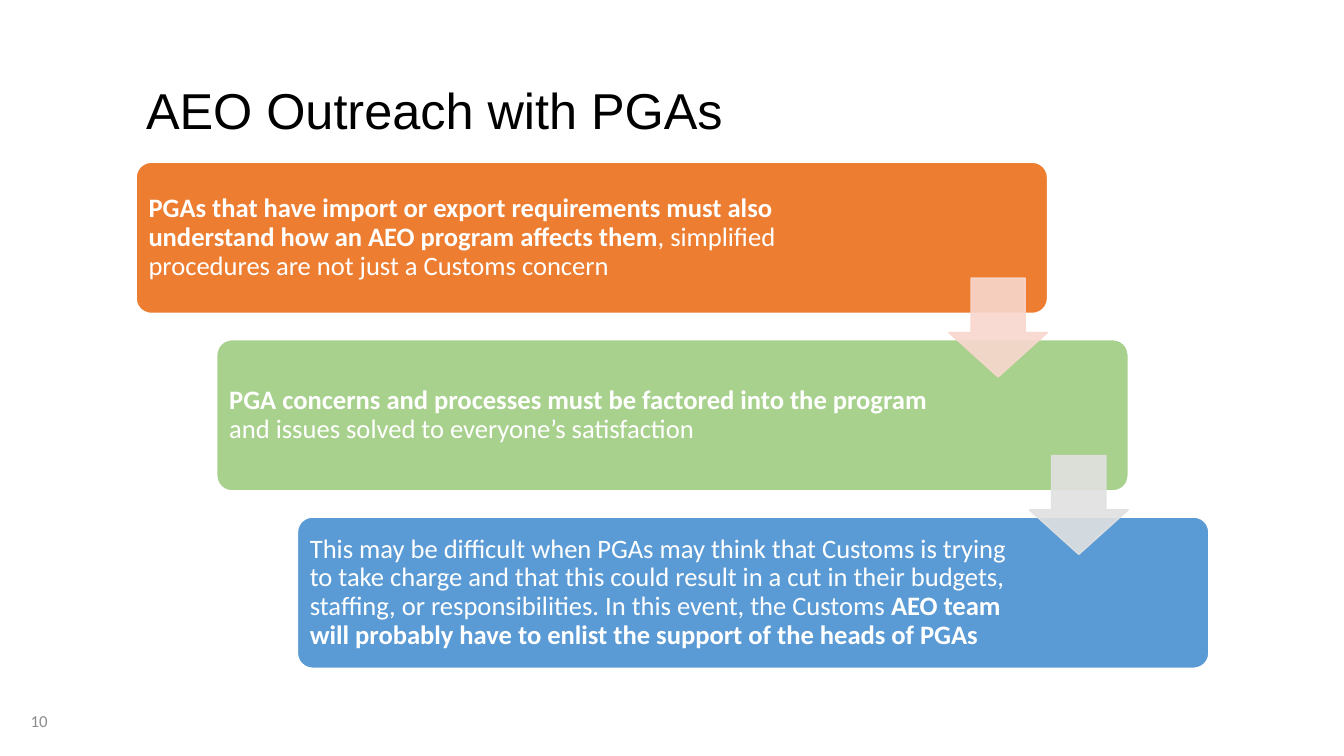
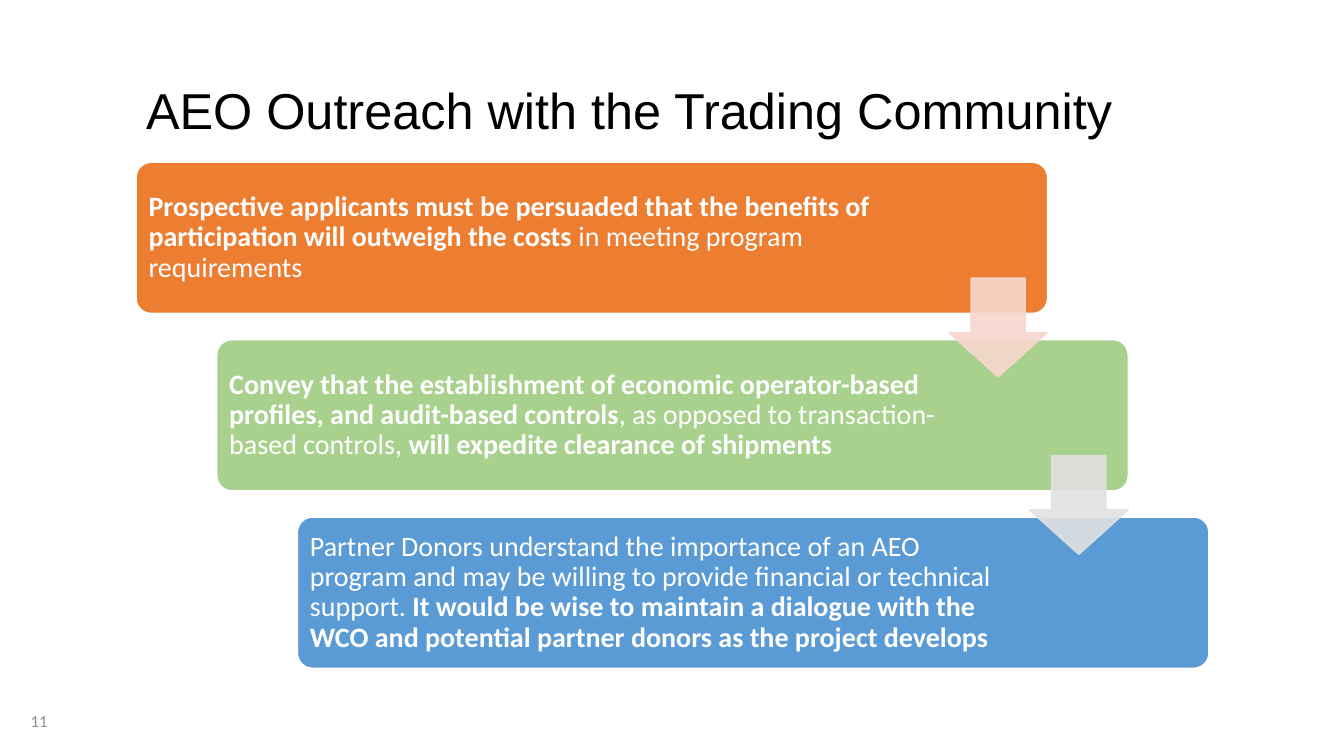
import pptx
import pptx.dml.color
import pptx.enum.shapes
import pptx.enum.text
import pptx.oxml.ns
import pptx.util
from lxml import etree

Inches = pptx.util.Inches
Pt = pptx.util.Pt
SHAPES = pptx.enum.shapes.MSO_SHAPE
ALIGN = pptx.enum.text.PP_ALIGN

WHITE, BLACK, GREY = "FFFFFF", "000000", "8C8C8C"
CARD_COLOURS = ("ED7D31", "A9D18E", "5B9BD5")
ARROW_COLOURS = ("F8D7CE", "E1E1E1")
ARROW_ALPHA = 90

# Staircase geometry, in inches
STAIRCASE = (1.35, 1.61)
CARD_WIDTH, CARD_HEIGHT = 9.04, 1.5
STEP_X, STEP_Y = 0.8, 1.76
CARD_INSET = 0.08
RIGHT_INSETS = (1.62, 1.86, 1.86)
ARROW_SIZE = 0.98
ARROW_DROP = 1.15

# Each card is a list of (text, bold) spans
SLIDES = [
    {
        "title": "AEO Outreach with PGAs",
        "number": "10",
        "size": 19,
        "cards": [
            [("PGAs that have import or export requirements must also understand "
              "how an AEO program affects them", True),
             (", simplified procedures are not just a Customs concern", False)],
            [("PGA concerns and processes must be factored into the program ", True),
             ("and issues solved to everyone’s satisfaction", False)],
            [("This may be difficult when PGAs may think that Customs is trying to "
              "take charge and that this could result in a cut in their budgets, "
              "staffing, or responsibilities. In this event, the Customs ", False),
             ("AEO team will probably have to enlist the support of the heads of "
              "PGAs", True)],
        ],
    },
    {
        "title": "AEO Outreach with the Trading Community",
        "number": "11",
        "size": 20,
        "cards": [
            [("Prospective applicants must be persuaded that the benefits of "
              "participation will outweigh the costs", True),
             (" in meeting program requirements", False)],
            [("Convey that the establishment of economic operator-based profiles, "
              "and audit-based controls", True),
             (", as opposed to transaction-based controls, ", False),
             ("will expedite clearance of shipments", True)],
            [("Partner Donors understand the importance of an AEO program and may "
              "be willing to provide financial or technical support. ", False),
             ("It would be wise to maintain a dialogue with the WCO and potential "
              "partner donors as the project develops", True)],
        ],
    },
]


def paint(target, colour, alpha=None):
    """Give a fill a solid colour, with an optional opacity in percent."""
    target.solid()
    target.fore_color.rgb = pptx.dml.color.RGBColor.from_string(colour)
    if alpha is not None:
        tag = pptx.oxml.ns.qn("a:srgbClr")
        # The fill's own colour element is found through its parent
        for element in target._xPr.findall(pptx.oxml.ns.qn("a:solidFill") + "/" + tag):
            etree.SubElement(element, pptx.oxml.ns.qn("a:alpha"), val=str(alpha * 1000))


def write(shape, spans, size, font="Calibri", colour=BLACK, align=ALIGN.LEFT,
          spacing=None, insets=(0.1, 0.05, 0.1, 0.05)):
    """Write (text, bold) spans as one paragraph, centred vertically."""
    frame = shape.text_frame
    frame.word_wrap = True
    frame.vertical_anchor = pptx.enum.text.MSO_ANCHOR.MIDDLE
    (frame.margin_left, frame.margin_top,
     frame.margin_right, frame.margin_bottom) = map(Inches, insets)
    para = frame.paragraphs[0]
    para.alignment = align
    para.line_spacing = spacing
    for text, bold in spans:
        span = para.add_run()
        span.text = text
        span.font.name = font
        span.font.size = Pt(size)
        span.font.bold = bold
        paint(span.font.fill, colour)


def add_text(page, box, text, size, **style):
    shape = page.shapes.add_textbox(*map(Inches, box))
    write(shape, [(text, False)], size, **style)


def add_block(page, kind, box, adjustments, fill, line, alpha=None):
    shape = page.shapes.add_shape(kind, *map(Inches, box))
    shape.shadow.inherit = False
    for index, value in enumerate(adjustments):
        shape.adjustments[index] = value
    paint(shape.fill, fill, alpha)
    paint(shape.line.fill, line, alpha)
    shape.line.width = Pt(1)
    return shape


def add_staircase(page, origin, cards, size):
    """Place the stepped cards, then the arrows that link them."""
    left, top = origin
    corners = [(left + i * STEP_X, top + i * STEP_Y) for i in range(len(cards))]
    for (x, y), spans, colour, right in zip(corners, cards, CARD_COLOURS, RIGHT_INSETS):
        card = add_block(page, SHAPES.ROUNDED_RECTANGLE,
                         (x, y, CARD_WIDTH, CARD_HEIGHT), [0.1], colour, WHITE)
        write(card, spans, size, colour=WHITE, spacing=0.9,
              insets=(CARD_INSET, CARD_INSET, right, CARD_INSET))
    for (x, y), colour in zip(corners, ARROW_COLOURS):
        box = (x + CARD_WIDTH - ARROW_SIZE, y + ARROW_DROP, ARROW_SIZE, ARROW_SIZE)
        # Adjustments: head length, then shaft width
        add_block(page, SHAPES.DOWN_ARROW, box, [0.55, 0.45], colour, colour, ARROW_ALPHA)


def add_page(deck, content):
    page = deck.slides.add_slide(deck.slide_layouts[6])
    # Title and page number
    add_text(page, (1.35, 0.4, 10.12, 1.45), content["title"], 36,
             font="Arial", spacing=0.9)
    add_text(page, (0.07, 6.95, 0.5, 0.4), content["number"], 12,
             colour=GREY, align=ALIGN.RIGHT)
    # Body
    add_staircase(page, STAIRCASE, content["cards"], content["size"])


def main():
    deck = pptx.Presentation()
    deck.slide_width, deck.slide_height = Inches(13.33), Inches(7.5)
    for content in SLIDES:
        add_page(deck, content)
    deck.save("out.pptx")


if __name__ == "__main__":
    main()
